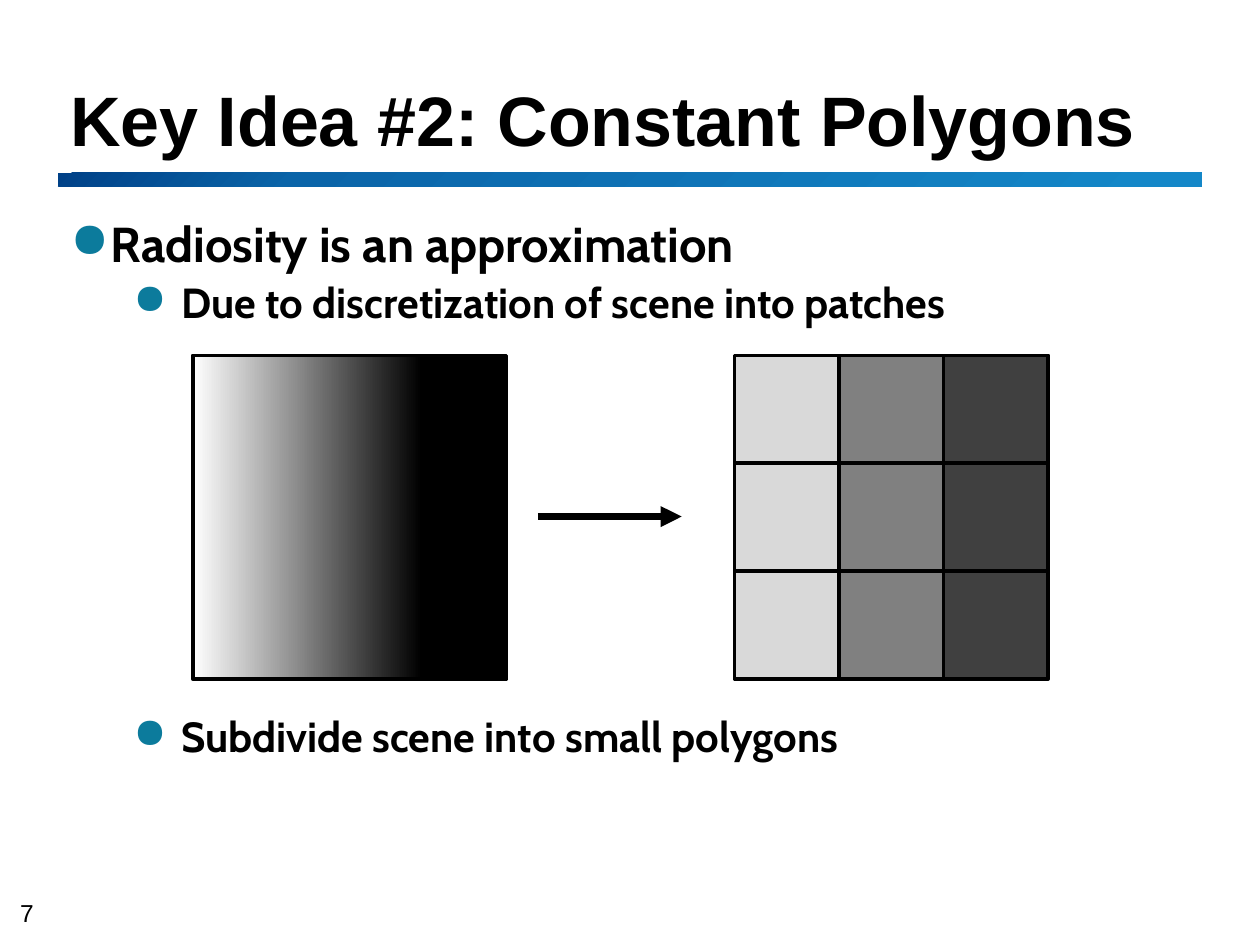
import pptx
import pptx.dml.color
import pptx.enum.shapes
import pptx.enum.text
import pptx.oxml
import pptx.oxml.ns
import pptx.util
from lxml import etree

Inches, Pt = pptx.util.Inches, pptx.util.Pt
RGB = pptx.dml.color.RGBColor.from_string
qn = pptx.oxml.ns.qn
RECT = pptx.enum.shapes.MSO_SHAPE.RECTANGLE
ANCHOR = pptx.enum.text.MSO_ANCHOR

COLORS = {
    "ink": "000000", "paper": "FFFFFF", "bullet": "0C7B9C",
    "navy": "004187", "blue": "0A64A8", "sky": "1487C8",
    "light": "D9D9D9", "mid": "808080", "dark": "404040",
}

deck = pptx.Presentation()
deck.slide_width, deck.slide_height = Inches(10), Inches(7.5)
slide = deck.slides.add_slide(deck.slide_layouts[6])
shapes = slide.shapes


def add_text(box, lines, anchor, margins=(0.1, 0.05)):
    """Add a text box; each line is (text, font values, paragraph values)."""
    frame = shapes.add_textbox(*map(Inches, box)).text_frame
    frame.word_wrap = True
    frame.vertical_anchor = anchor
    frame.margin_left = frame.margin_right = Inches(margins[0])
    frame.margin_top = frame.margin_bottom = Inches(margins[1])
    for i, (text, font, form) in enumerate(lines):
        para = frame.add_paragraph() if i else frame.paragraphs[0]
        for name, value in form.items():
            setattr(para, name, value)
        run = para.add_run()
        run.text = text
        run.font.color.rgb = RGB(COLORS["ink"])
        for name, value in font.items():
            setattr(run.font, name, value)
    return frame


def add_rect(box, fill, line=None, angle=0):
    """Add a rectangle; fill is a colour name or a list of (percent, name)."""
    rect = shapes.add_shape(RECT, *map(Inches, box))
    rect.shadow.inherit = False
    if isinstance(fill, str):
        rect.fill.solid()
        rect.fill.fore_color.rgb = RGB(COLORS[fill])
    else:
        rect.fill.gradient()
        rect.fill.gradient_angle = angle
        stops = rect.element.spPr.find(qn("a:gradFill")).find(qn("a:gsLst"))
        for stop in list(stops):
            stops.remove(stop)
        for pos, name in fill:
            stop = etree.SubElement(stops, qn("a:gs"), pos=str(pos * 1000))
            etree.SubElement(stop, qn("a:srgbClr"), val=COLORS[name])
    if line:
        rect.line.color.rgb = RGB(COLORS["ink"])
        rect.line.width = Pt(line)
    else:
        rect.line.fill.background()


# Page number, rule and title
add_text((0.16, 7.13, 0.34, 0.23),
         [("7", {"name": "Arial", "size": Pt(14)}, {})], ANCHOR.BOTTOM, (0, 0))
# python-pptx counts angles anticlockwise
add_rect((0.46, 1.37, 9.08, 0.11),
         [(0, "navy"), (21, "blue"), (96, "sky")], angle=315)
add_text((0.46, 0.33, 9.06, 0.99),
         [("Key Idea #2: Constant Polygons",
           {"name": "Arial", "size": Pt(40), "bold": True},
           {"line_spacing": Pt(36)})], ANCHOR.BOTTOM)

# Bullets, with room for the figure above the last one
head = {"name": "Cabin", "size": Pt(28), "bold": True}
sub = {**head, "size": Pt(24)}
form = {"line_spacing": Pt(27), "space_after": Pt(4)}
body = add_text((0.46, 1.74, 9.1, 5.54), [
    ("Radiosity is an approximation", head, form),
    ("Due to discretization of scene into patches", sub, {**form, "level": 1}),
    ("Subdivide scene into small polygons", sub,
     {**form, "level": 1, "space_before": Pt(217)}),
], ANCHOR.TOP)
for para in body.paragraphs:
    left, hang = (0.88, 0.38) if para.level else (0.32, 0.32)
    props = para._p.get_or_add_pPr()
    props.set("marL", str(Inches(left)))
    props.set("indent", str(-Inches(hang)))
    tint = etree.SubElement(props, qn("a:buClr"))
    etree.SubElement(tint, qn("a:srgbClr"), val=COLORS["bullet"])
    etree.SubElement(props, qn("a:buChar"), char="●")

# Smooth patch on the left, 3 by 3 patches on the right
top, wide, high = 2.82, 2.49, 2.57
add_rect((1.53, top, wide, high),
         [(0, "paper"), (73, "ink"), (100, "ink")], 2)
for col, shade in enumerate(("light", "mid", "dark")):
    for row in range(3):
        add_rect((5.83 + col * wide / 3, top + row * high / 3,
                  wide / 3, high / 3), shade, 2)

arrow = shapes.add_connector(pptx.enum.shapes.MSO_CONNECTOR.STRAIGHT,
                             Inches(4.27), Inches(4.1), Inches(5.41), Inches(4.1))
arrow.line.color.rgb = RGB(COLORS["ink"])
arrow.line.width = Pt(4)
etree.SubElement(arrow.line._get_or_add_ln(), qn("a:tailEnd"), type="triangle")
etree.SubElement(arrow.element.spPr, qn("a:effectLst"))

deck.save("out.pptx")
